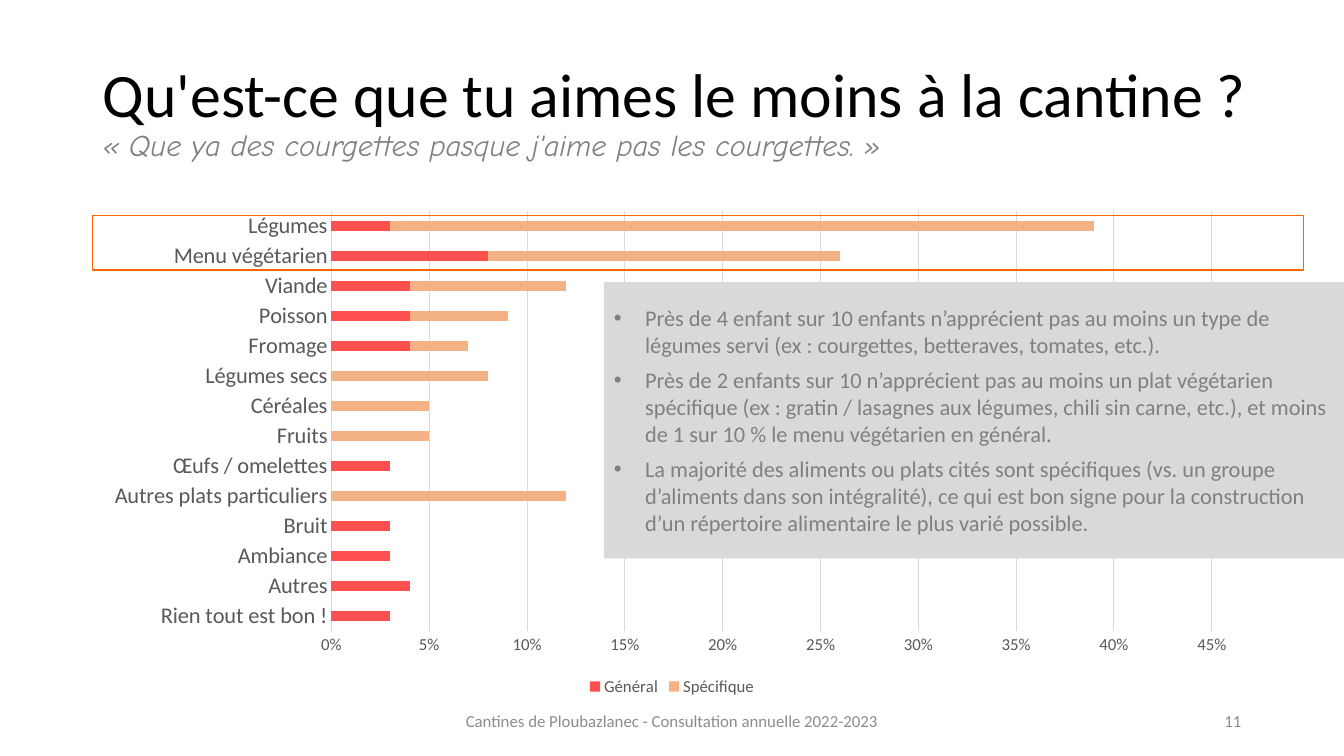
from lxml import etree
from pptx import Presentation
from pptx.chart.data import CategoryChartData
from pptx.dml.color import RGBColor
from pptx.enum.chart import XL_CHART_TYPE, XL_LEGEND_POSITION, XL_TICK_MARK
from pptx.enum.shapes import MSO_SHAPE
from pptx.enum.text import MSO_ANCHOR, MSO_AUTO_SIZE, PP_ALIGN
from pptx.oxml.ns import qn
from pptx.util import Inches, Pt

BAR_STACKED = XL_CHART_TYPE.BAR_STACKED
LEGEND_BOTTOM = XL_LEGEND_POSITION.BOTTOM
NO_TICK = XL_TICK_MARK.NONE
RECTANGLE = MSO_SHAPE.RECTANGLE
MIDDLE = MSO_ANCHOR.MIDDLE
NO_AUTOFIT = MSO_AUTO_SIZE.NONE
LEFT, CENTER, RIGHT = PP_ALIGN.LEFT, PP_ALIGN.CENTER, PP_ALIGN.RIGHT

FONT, QUOTE_FONT = "Calibri", "Comic Neue"
COLORS = {
    "title": "000000", "muted": "808080", "footer": "8C8C8C", "axis": "595959",
    "grid": "D9D9D9", "panel": "D9D9D9", "general": "FF5050",
    "specific": "F4B183", "highlight": "FF6600",
}
SLIDE_W, SLIDE_H = 13.33, 7.5
MARGIN = 0.92
CONTENT_W = SLIDE_W - 2 * MARGIN

# Category, general share, specific share (bottom bar first)
DISLIKES = [
    ("Rien tout est bon !", 0.03, None),
    ("Autres", 0.04, None),
    ("Ambiance", 0.03, None),
    ("Bruit", 0.03, None),
    ("Autres plats particuliers", None, 0.12),
    ("Œufs / omelettes", 0.03, None),
    ("Fruits", None, 0.05),
    ("Céréales", 0, 0.05),
    ("Légumes secs", 0, 0.08),
    ("Fromage", 0.04, 0.03),
    ("Poisson", 0.04, 0.05),
    ("Viande", 0.04, 0.08),
    ("Menu végétarien", 0.08, 0.18),
    ("Légumes", 0.03, 0.36),
]
FINDINGS = [
    "Près de 4 enfant sur 10 enfants n’apprécient pas au moins un type de légumes "
    "servi (ex : courgettes, betteraves, tomates, etc.).",
    "Près de 2 enfants sur 10 n’apprécient pas au moins un plat végétarien spécifique "
    "(ex : gratin / lasagnes aux légumes, chili sin carne, etc.), et moins de 1 sur 10 % "
    "le menu végétarien en général.",
    "La majorité des aliments ou plats cités sont spécifiques (vs. un groupe d’aliments "
    "dans son intégralité), ce qui est bon signe pour la construction d’un répertoire "
    "alimentaire le plus varié possible.",
]


def rgb(name):
    return RGBColor.from_string(COLORS[name])


def inches(box):
    return [Inches(v) for v in box]


def style_font(font, size, color, name=FONT):
    font.name, font.size = name, Pt(size)
    font.bold = False
    font.color.rgb = rgb(color)


def add_run(p, text, size, color, name=FONT):
    r = p.add_run()
    r.text = text
    style_font(r.font, size, color, name)
    return r


def add_title(s, box):
    sp = s.shapes.title
    sp.left, sp.top, sp.width, sp.height = inches(box)
    tf = sp.text_frame
    tf.auto_size = NO_AUTOFIT
    tf.vertical_anchor = MIDDLE
    p = tf.paragraphs[0]
    p.alignment, p.line_spacing = LEFT, 0.9
    add_run(p, "Qu'est-ce que tu aimes le moins à la cantine ?", 44.1, "title")
    p.add_line_break()
    quote = add_run(p, "« Que ya des courgettes pasque j'aime pas les courgettes.\u00a0»",
                    21.6, "muted", QUOTE_FONT)
    quote.font.italic = True


def place_plot(chart, x, y, w, h):
    """Fix the inner plot area, in shares of the chart's size."""
    plot_area = chart._chartSpace.find(".//" + qn("c:plotArea"))
    for old in plot_area.findall(qn("c:layout")):
        plot_area.remove(old)
    layout = etree.Element(qn("c:layout"))
    manual = etree.SubElement(layout, qn("c:manualLayout"))
    settings = [("layoutTarget", "inner"), ("xMode", "edge"), ("yMode", "edge"),
                ("x", x), ("y", y), ("w", w), ("h", h)]
    for tag, value in settings:
        etree.SubElement(manual, qn("c:" + tag)).set("val", str(value))
    plot_area.insert(0, layout)


def add_dislikes_chart(s, box):
    names, general, specific = zip(*DISLIKES)
    data = CategoryChartData(number_format="0%")
    data.categories = names
    data.add_series("Général", general)
    data.add_series("Spécifique", specific)
    chart = s.shapes.add_chart(BAR_STACKED, *inches(box), data).chart
    chart.has_title = False
    chart.font.name, chart.font.size = FONT, Pt(10)

    # Bars
    plot = chart.plots[0]
    plot.gap_width, plot.overlap = 182, 100
    plot.vary_by_categories = False
    for series, color in zip(plot.series, ("general", "specific")):
        series.format.fill.solid()
        series.format.fill.fore_color.rgb = rgb(color)
        series.invert_if_negative = False

    # Axes
    cat, val = chart.category_axis, chart.value_axis
    for axis, size in ((cat, 16), (val, 12)):
        axis.major_tick_mark = axis.minor_tick_mark = NO_TICK
        style_font(axis.tick_labels.font, size, "axis")
    cat.has_major_gridlines = False
    val.has_major_gridlines = True
    for line in (cat.format.line, val.major_gridlines.format.line):
        line.color.rgb = rgb("grid")
        line.width = Pt(0.75)
    val.format.line.fill.background()
    val.minimum_scale, val.maximum_scale, val.major_unit = 0, 0.45, 0.05
    val.tick_labels.number_format = "0%"
    val.tick_labels.number_format_is_linked = False

    # Legend and plot position
    chart.has_legend = True
    chart.legend.position = LEGEND_BOTTOM
    chart.legend.include_in_layout = False
    style_font(chart.legend.font, 12, "axis")
    place_plot(chart, 0.206, 0.019, 0.76, 0.842)


def add_footer(s, box, text, align):
    tf = s.shapes.add_textbox(*inches(box)).text_frame
    tf.word_wrap = True
    tf.vertical_anchor = MIDDLE
    p = tf.paragraphs[0]
    p.alignment = align
    add_run(p, text, 12, "footer")


def add_findings(s, box):
    sp = s.shapes.add_shape(RECTANGLE, *inches(box))
    sp.shadow.inherit = False
    sp.fill.solid()
    sp.fill.fore_color.rgb = rgb("panel")
    sp.line.fill.background()
    tf = sp.text_frame
    tf.word_wrap = True
    tf.vertical_anchor = MIDDLE
    for i, finding in enumerate(FINDINGS):
        p = tf.add_paragraph() if i else tf.paragraphs[0]
        p.alignment, p.space_after = LEFT, Pt(6)
        pPr = p._p.get_or_add_pPr()
        pPr.set("marL", str(Inches(0.31)))
        pPr.set("indent", str(-Inches(0.31)))
        etree.SubElement(pPr, qn("a:buFont")).set("typeface", "Arial")
        etree.SubElement(pPr, qn("a:buChar")).set("char", "•")
        add_run(p, finding, 16, "muted")


def add_highlight(s, box):
    sp = s.shapes.add_shape(RECTANGLE, *inches(box))
    sp.shadow.inherit = False
    sp.fill.background()
    sp.line.color.rgb = rgb("highlight")
    sp.line.width = Pt(1)


def main():
    prs = Presentation()
    prs.slide_width, prs.slide_height = Inches(SLIDE_W), Inches(SLIDE_H)
    s = prs.slides.add_slide(prs.slide_layouts[5])
    add_title(s, (MARGIN, 0.4, SLIDE_W - MARGIN, 1.45))
    add_dislikes_chart(s, (MARGIN, 2, CONTENT_W, 4.95))
    add_footer(s, ((SLIDE_W - 4.5) / 2, 6.95, 4.5, 0.4),
               "Cantines de Ploubazlanec - Consultation annuelle 2022-2023", CENTER)
    add_footer(s, (SLIDE_W - MARGIN - 3, 6.95, 3, 0.4), "11", RIGHT)
    add_findings(s, (5.99, 2.8, SLIDE_W - 5.99, 2.74))
    add_highlight(s, (MARGIN, 2.14, 12.01, 0.54))
    prs.save("out.pptx")


if __name__ == "__main__":
    main()
